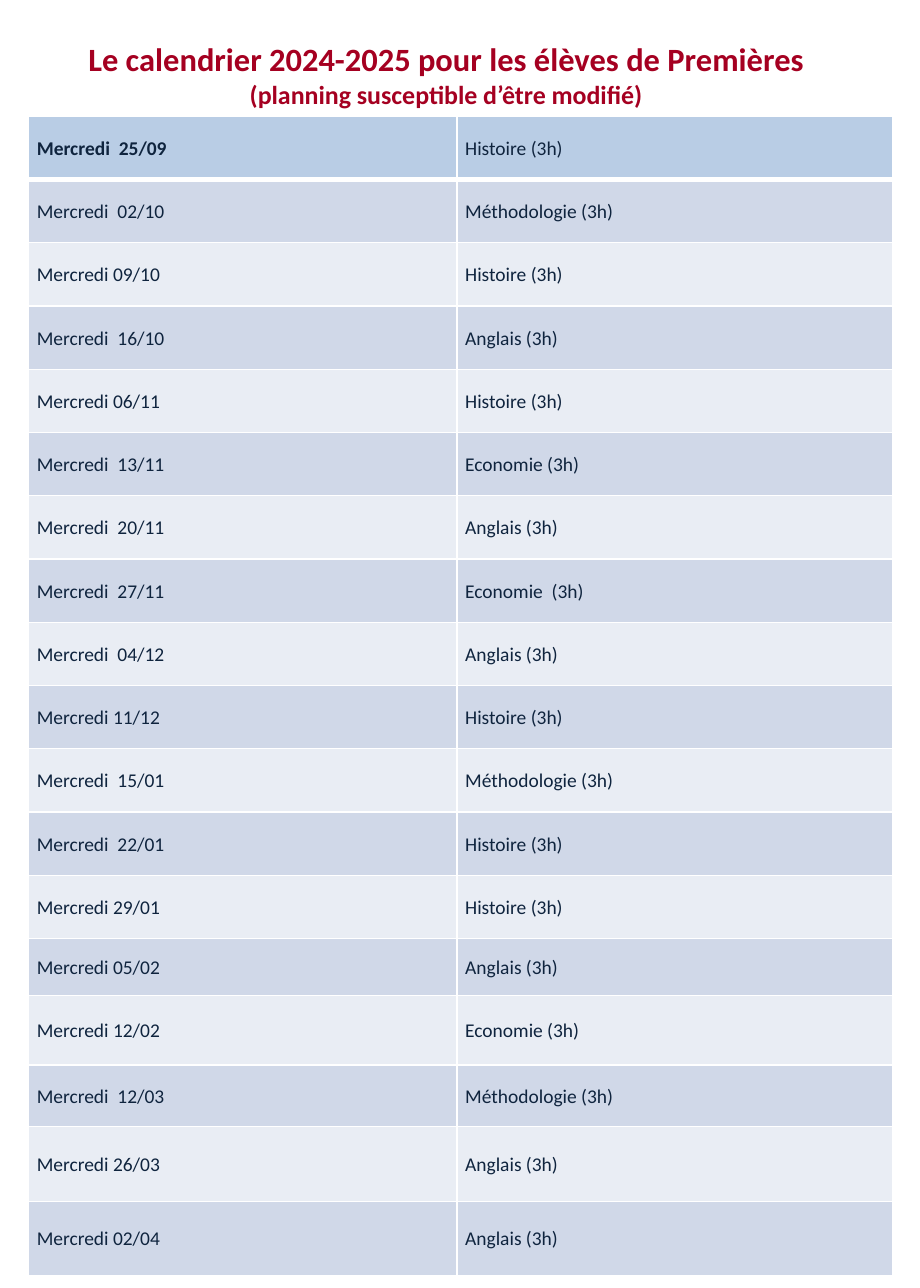
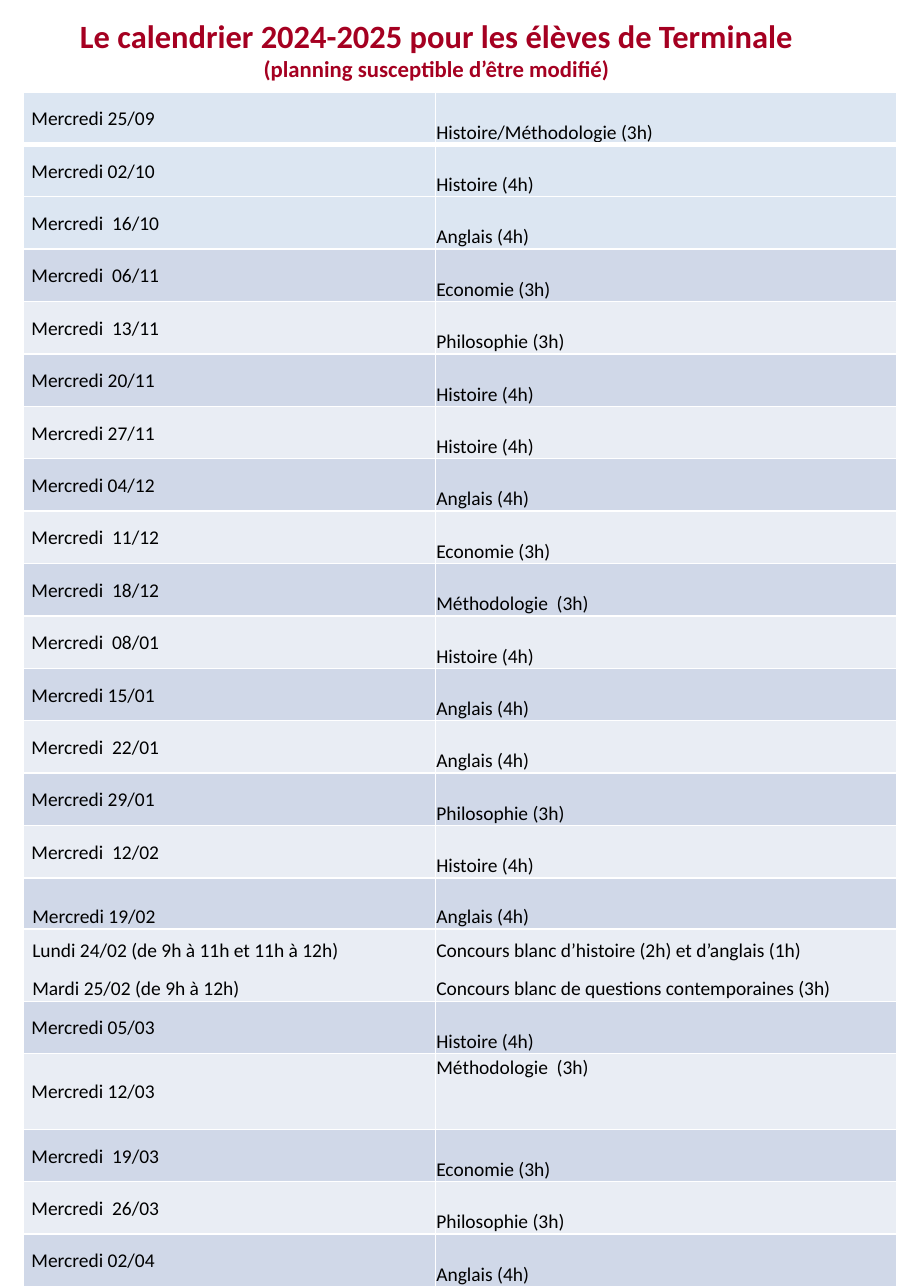
from lxml import etree
from pptx import Presentation
from pptx.dml.color import RGBColor
from pptx.enum.text import MSO_ANCHOR as Anchor, MSO_AUTO_SIZE as Fit, PP_ALIGN as Align
from pptx.oxml.ns import qn
from pptx.util import Pt

RED = RGBColor(0xA5, 0x00, 0x21)
NAVY = RGBColor(0x0F, 0x24, 0x3E)
BLACK = RGBColor(0x00, 0x00, 0x00)
WHITE = RGBColor(0xFF, 0xFF, 0xFF)
BLUE = RGBColor(0xB9, 0xCD, 0xE5)
PALE = RGBColor(0xDC, 0xE6, 0xF2)
DARK = RGBColor(0xD0, 0xD8, 0xE8)
LIGHT = RGBColor(0xE9, 0xED, 0xF4)
FONT = "Calibri"
NOTE = "(planning susceptible d’être modifié)"

FIRST = [
    ("Mercredi  25/09", "Histoire (3h)"),
    ("Mercredi  02/10", "Méthodologie (3h)"),
    ("Mercredi 09/10", "Histoire (3h)"),
    ("Mercredi  16/10", "Anglais (3h)"),
    ("Mercredi 06/11", "Histoire (3h)"),
    ("Mercredi  13/11", "Economie (3h)"),
    ("Mercredi  20/11", "Anglais (3h)"),
    ("Mercredi  27/11", "Economie  (3h)"),
    ("Mercredi  04/12", "Anglais (3h)"),
    ("Mercredi 11/12", "Histoire (3h)"),
    ("Mercredi  15/01", "Méthodologie (3h)"),
    ("Mercredi  22/01", "Histoire (3h)"),
    ("Mercredi 29/01", "Histoire (3h)"),
    ("Mercredi 05/02", "Anglais (3h)"),
    ("Mercredi 12/02", "Economie (3h)"),
    ("Mercredi  12/03", "Méthodologie (3h)"),
    ("Mercredi 26/03", "Anglais (3h)"),
    ("Mercredi 02/04", "Anglais (3h)"),
]
FINAL = [
    ("Mercredi 25/09", "Histoire/Méthodologie (3h)"),
    ("Mercredi 02/10", "Histoire (4h)"),
    ("Mercredi  16/10", "Anglais (4h)"),
    ("Mercredi  06/11", "Economie (3h)"),
    ("Mercredi  13/11", "Philosophie (3h)"),
    ("Mercredi 20/11", "Histoire (4h)"),
    ("Mercredi 27/11", "Histoire (4h)"),
    ("Mercredi 04/12", "Anglais (4h)"),
    ("Mercredi  11/12", "Economie (3h)"),
    ("Mercredi  18/12", "Méthodologie  (3h)"),
    ("Mercredi  08/01", "Histoire (4h)"),
    ("Mercredi 15/01", "Anglais (4h)"),
    ("Mercredi  22/01", "Anglais (4h)"),
    ("Mercredi 29/01", "Philosophie (3h)"),
    ("Mercredi  12/02", "Histoire (4h)"),
    ("Mercredi 19/02", "Anglais (4h)"),
    ("Lundi 24/02 (de 9h à 11h et 11h à 12h)\nMardi 25/02 (de 9h à 12h)",
     "Concours blanc d’histoire (2h) et d’anglais (1h)\n"
     "Concours blanc de questions contemporaines (3h)"),
    ("Mercredi 05/03", "Histoire (4h)"),
    ("Mercredi 12/03", "Méthodologie  (3h)"),
    ("Mercredi  19/03", "Economie (3h)"),
    ("Mercredi  26/03", "Philosophie (3h)"),
    ("Mercredi 02/04", "Anglais (4h)"),
]

MID = (Anchor.MIDDLE, 5, 3, 5, 3)
LOW = (Anchor.BOTTOM, 0.5, 0.5, 0.5, 0)
EDGE = (Anchor.BOTTOM, 5.5, 0.5, 0.5, 0)
HIGH = (Anchor.TOP, 0.5, 0.5, 0.5, 0)


def style(par, size, tint, bold):
    par.font.name = FONT
    par.font.size = Pt(size)
    par.font.color.rgb = tint
    par.font.bold = bold


def place(cell, text, look, fill, tint, bold):
    cell.fill.solid()
    cell.fill.fore_color.rgb = fill
    cell.vertical_anchor = look[0]
    (cell.margin_left, cell.margin_top,
     cell.margin_right, cell.margin_bottom) = map(Pt, look[1:])
    cell.text_frame.text = text
    for par in cell.text_frame.paragraphs:
        par.line_spacing = 1.07
        par.space_after = Pt(8)
        style(par, 12, tint, bold)


pages = [
    dict(group="Premières", note=16, box=(45, 0, 460, 71), spot=(17.7, 71.6),
         cols=(264, 268.5), rows=FIRST, high=39,
         odd={13: 35, 14: 43, 15: 38, 16: 46, 17: 46},
         tint=NAVY, top=BLUE, tops=1, bold=True,
         looks=(MID, MID), other={}),
    dict(group="Terminale", note=14, box=(39, 0, 460, 54.3), spot=(14.4, 56.7),
         cols=(254, 284.4), rows=FINAL, high=32.3,
         odd={15: 31.5, 16: 44.5, 18: 46.7, 21: 32.5},
         tint=BLACK, top=PALE, tops=3, bold=False,
         looks=(MID, LOW), other={(15, 0): EDGE, (16, 0): EDGE, (18, 1): HIGH}),
]

deck = Presentation()
deck.slide_width = Pt(566.93)
deck.slide_height = Pt(793.7)

for page in pages:
    slide = deck.slides.add_slide(deck.slide_layouts[5])
    title = slide.shapes.title
    title.left, title.top, title.width, title.height = map(Pt, page["box"])
    frame = title.text_frame
    frame.auto_size = Fit.NONE
    frame.vertical_anchor = Anchor.BOTTOM
    frame.text = f"Le calendrier 2024-2025 pour les élèves de {page['group']}\n{NOTE}"
    for par, size in zip(frame.paragraphs, (20, page["note"])):
        par.alignment = Align.CENTER
        style(par, size, RED, True)

    rows = page["rows"]
    highs = [page["odd"].get(r, page["high"]) for r in range(len(rows))]
    grid = slide.shapes.add_table(
        len(rows), 2, *map(Pt, page["spot"]), Pt(sum(page["cols"])), Pt(sum(highs))).table
    for col, width in zip(grid.columns, page["cols"]):
        col.width = Pt(width)
    for r, row in enumerate(rows):
        grid.rows[r].height = Pt(highs[r])
        fill = page["top"] if r < page["tops"] else DARK if r % 2 else LIGHT
        for c, text in enumerate(row):
            look = page["other"].get((r, c), page["looks"][c])
            bold = page["bold"] and r == c == 0
            place(grid.cell(r, c), text, look, fill, page["tint"], bold)

    for cell in grid.rows[0].cells:
        line = etree.Element(qn("a:lnB"), w=str(Pt(3)))
        solid = etree.SubElement(line, qn("a:solidFill"))
        etree.SubElement(solid, qn("a:srgbClr"), val=str(WHITE))
        cell._tc.get_or_add_tcPr().insert(0, line)

deck.save("out.pptx")
